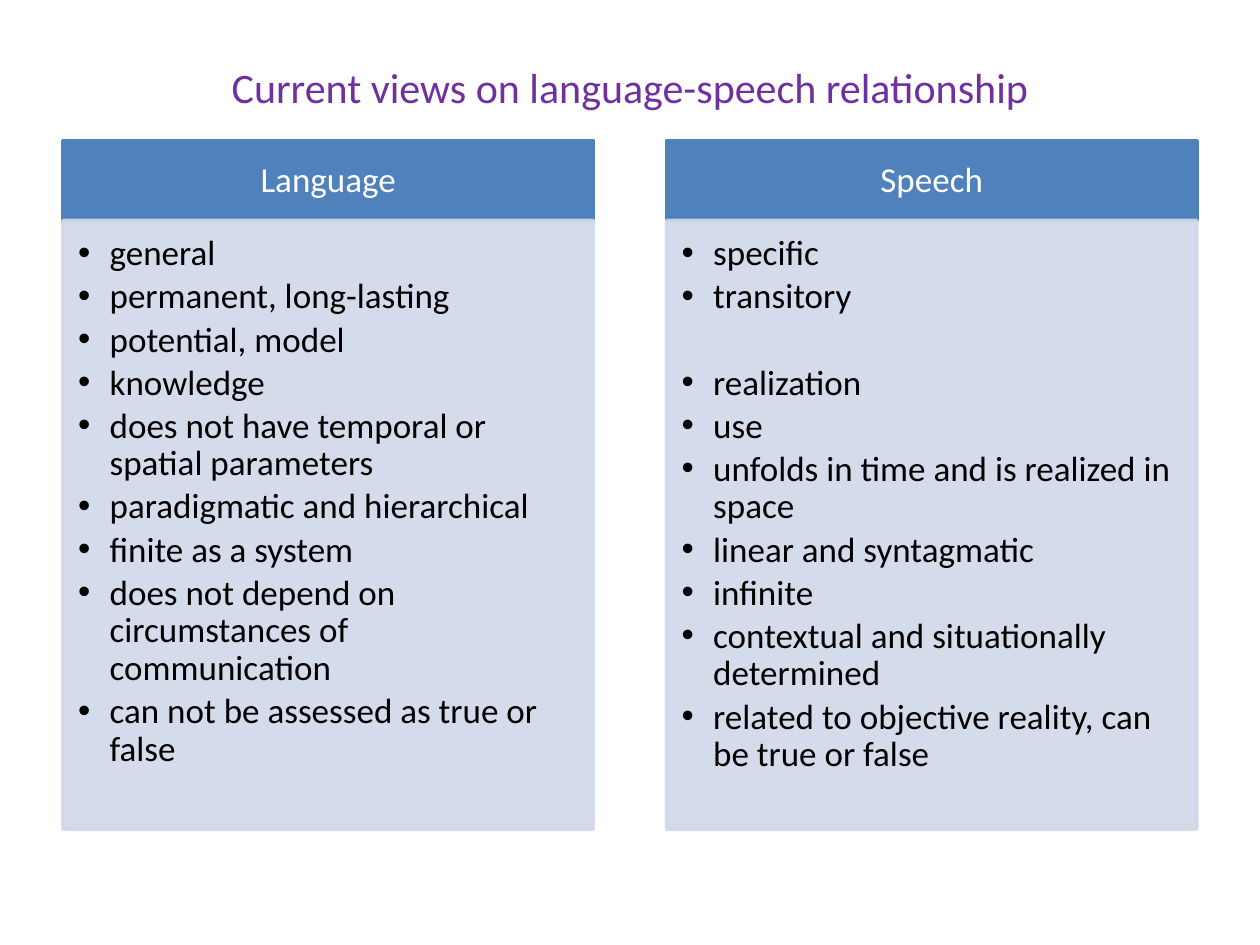
from dataclasses import dataclass

from lxml import etree
from pptx import Presentation
from pptx.dml.color import RGBColor
from pptx.enum.text import MSO_ANCHOR, MSO_AUTO_SIZE, PP_ALIGN
from pptx.oxml.ns import qn
from pptx.util import Inches, Pt

MIDDLE, TOP = MSO_ANCHOR.MIDDLE, MSO_ANCHOR.TOP
CENTER, LEFT = PP_ALIGN.CENTER, PP_ALIGN.LEFT
NO_AUTOFIT = MSO_AUTO_SIZE.NONE


@dataclass(frozen=True)
class Theme:
    face: str = "Calibri"
    title_size: int = 24
    text_size: int = 20
    title: str = "7030A0"
    header: str = "4F81BD"
    header_text: str = "FFFFFF"
    panel: str = "D0D8E8"
    panel_text: str = "000000"
    panel_opacity: int = 90


theme = Theme()
WIDTH, HEIGHT = Inches(10), Inches(7.5)
MARGIN = Inches(0.5)
COLUMN_WIDTH = Inches(4.21)
COLUMN_STEP = WIDTH - 2 * MARGIN - COLUMN_WIDTH
TITLE_TOP, TITLE_HEIGHT = Inches(0.3), Inches(0.77)
HEADER_TOP, HEADER_HEIGHT = Inches(1.12), Inches(0.63)
PANEL_TOP, PANEL_HEIGHT = HEADER_TOP + HEADER_HEIGHT, Inches(4.83)
HANGING = Inches(0.25)
SKIPPED_ROW = Pt(24.6)

COLUMNS = [
    ("Language", [
        "general",
        "permanent, long-lasting",
        "potential, model",
        "knowledge",
        "does not have temporal or spatial parameters",
        "paradigmatic and hierarchical",
        "finite as a system",
        "does not depend on circumstances of communication",
        "can not be assessed as true or false",
    ]),
    ("Speech", [
        "specific",
        "transitory",
        "realization",
        "use",
        "unfolds in time and is realized in space",
        "linear and syntagmatic",
        "infinite",
        "contextual and situationally determined",
        "related to objective reality, can be true or false",
    ]),
]


def place_text(box, area, lines, size, color, anchor, align, insets):
    box.left, box.top, box.width, box.height = area
    frame = box.text_frame
    frame.text = "\n".join(lines)
    frame.word_wrap = True
    frame.auto_size = NO_AUTOFIT
    frame.vertical_anchor = anchor
    (frame.margin_left, frame.margin_top,
     frame.margin_right, frame.margin_bottom) = map(Inches, insets)
    for para in frame.paragraphs:
        para.alignment = align
        para.space_before = Pt(0)
        para.font.name = theme.face
        para.font.size = Pt(size)
        para.font.bold = False
        para.font.color.rgb = RGBColor.from_string(color)


def paint(box, color):
    box.fill.solid()
    box.fill.fore_color.rgb = RGBColor.from_string(color)
    box.line.color.rgb = RGBColor.from_string(color)
    box.line.width = Pt(2)


deck = Presentation()
deck.slide_width, deck.slide_height = WIDTH, HEIGHT
page = deck.slides.add_slide(deck.slide_layouts.get_by_name("Comparison"))
title, *boxes = page.placeholders

place_text(title, (MARGIN, TITLE_TOP, WIDTH - 2 * MARGIN, TITLE_HEIGHT),
           ["Current views on language-speech relationship"],
           theme.title_size, theme.title, MIDDLE, CENTER, (0.1, 0.05, 0.1, 0.05))

for index, (heading, points) in enumerate(COLUMNS):
    header, panel = boxes[2 * index:2 * index + 2]
    left = MARGIN + index * COLUMN_STEP

    place_text(header, (left, HEADER_TOP, COLUMN_WIDTH, HEADER_HEIGHT), [heading],
               theme.text_size, theme.header_text, MIDDLE, CENTER,
               (0.16, 0.09, 0.16, 0.09))
    paint(header, theme.header)
    header.text_frame.paragraphs[0].line_spacing = 0.9

    place_text(panel, (left, PANEL_TOP, COLUMN_WIDTH, PANEL_HEIGHT), points,
               theme.text_size, theme.panel_text, TOP, LEFT,
               (0.12, 0.12, 0.16, 0.17))
    paint(panel, theme.panel)
    for tint in panel.element.spPr.iter(qn("a:srgbClr")):
        etree.SubElement(tint, qn("a:alpha")).set("val", str(theme.panel_opacity * 1000))

    for para in panel.text_frame.paragraphs:
        para.line_spacing = 0.9
        para.space_after = Pt(3)
        if para.text == "realization":
            para.space_before = SKIPPED_ROW
        properties = para._p.get_or_add_pPr()
        properties.set("marL", str(HANGING))
        properties.set("indent", str(-HANGING))

deck.save("out.pptx")
